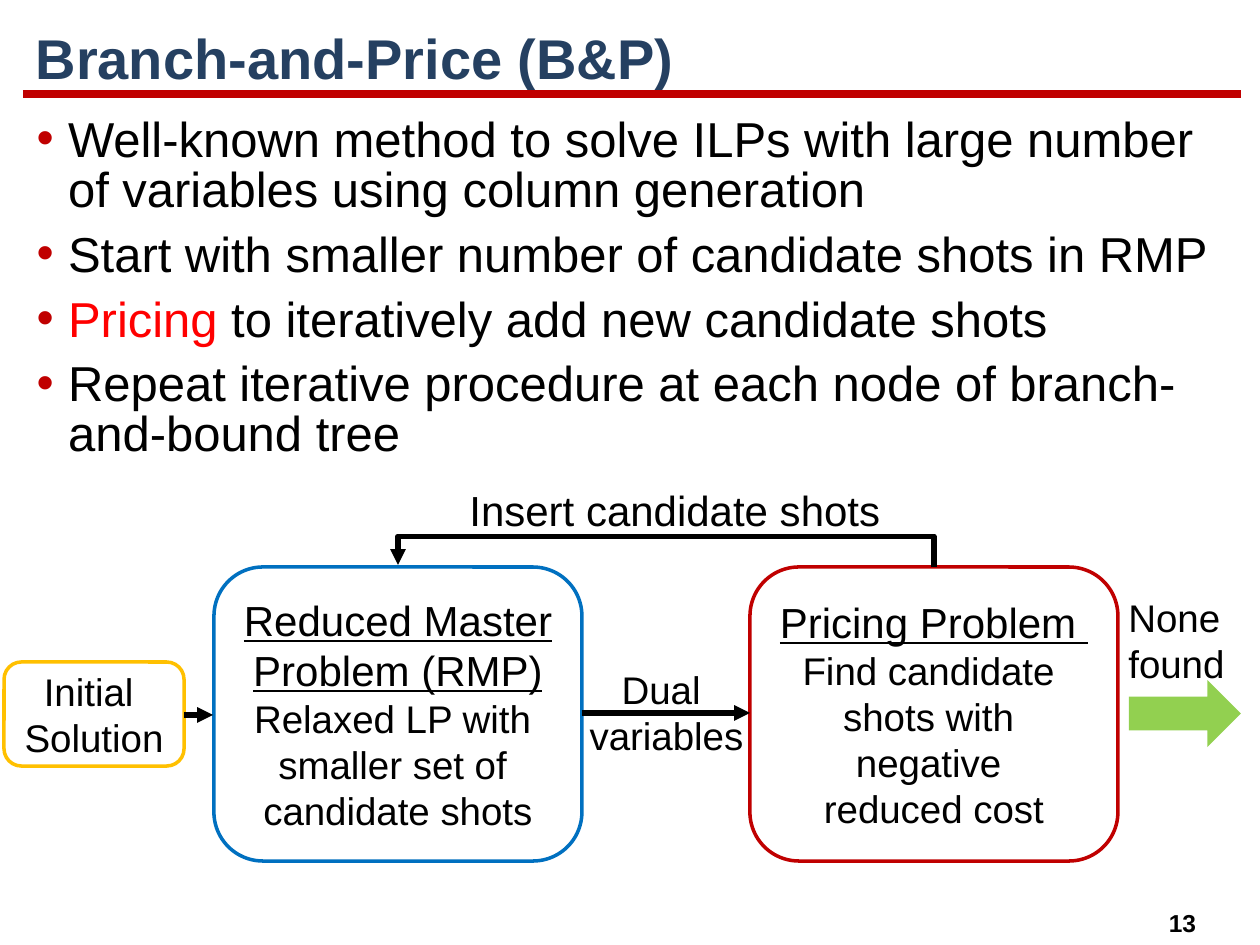
from lxml import etree
from pptx import Presentation
from pptx.dml.color import RGBColor
from pptx.enum.shapes import MSO_CONNECTOR, MSO_SHAPE
from pptx.enum.text import MSO_ANCHOR, MSO_AUTO_SIZE, PP_ALIGN
from pptx.oxml.ns import qn
from pptx.util import Pt

SCALE = 914400 / 126
FONT = "Arial"
BLACK = RGBColor(0x00, 0x00, 0x00)
NAVY = RGBColor(0x25, 0x40, 0x61)
CRIMSON = RGBColor(0xC0, 0x00, 0x00)
RED = RGBColor(0xFF, 0x00, 0x00)
BLUE = RGBColor(0x00, 0x70, 0xC0)
GOLD = RGBColor(0xFF, 0xC0, 0x00)
GREEN = RGBColor(0x92, 0xD0, 0x50)
STRAIGHT, ELBOW = MSO_CONNECTOR.STRAIGHT, MSO_CONNECTOR.ELBOW
ROUND, ARROW = MSO_SHAPE.ROUNDED_RECTANGLE, MSO_SHAPE.RIGHT_ARROW
TOP, MIDDLE = MSO_ANCHOR.TOP, MSO_ANCHOR.MIDDLE
LEFT, CENTER = PP_ALIGN.LEFT, PP_ALIGN.CENTER
NO_FIT = MSO_AUTO_SIZE.NONE

POINTS = [
    "Well-known method to solve ILPs with large number of variables "
    "using column generation",
    "Start with smaller number of candidate shots in RMP",
    [("Pricing", {"color": RED}), (" to iteratively add new candidate shots", {})],
    "Repeat iterative procedure at each node of branch-and-bound tree",
]
HEAD = {"size": 24, "underline": True}
MASTER = [
    [("Reduced Master Problem (RMP)", HEAD)],
    "Relaxed LP with ", "smaller set of ", "candidate shots",
]
PRICING = [
    [("Pricing Problem ", HEAD)],
    "Find candidate ", "shots with ", "negative \nreduced cost",
]


def px(*vals):
    return [round(v * SCALE) for v in vals]


def style(font, size=22, color=BLACK, bold=False, underline=False):
    font.name, font.size = FONT, Pt(size)
    font.bold, font.underline = bold, underline
    font.color.rgb = color


def write(frame, lines, align=LEFT, anchor=TOP, wrap=True, space=None, **fmt):
    """Fill a frame; a line is a string or a list of (text, format) runs."""
    frame.auto_size, frame.word_wrap = NO_FIT, wrap
    frame.vertical_anchor = anchor
    for i, line in enumerate(lines):
        para = frame.add_paragraph() if i else frame.paragraphs[0]
        para.alignment = align
        para.line_spacing = space
        for text, extra in [(line, {})] if isinstance(line, str) else line:
            for j, part in enumerate(text.split("\n")):
                if j:
                    para.add_line_break()
                run = para.add_run()
                run.text = part
                style(run.font, **{**fmt, **extra})


def place(shape, *box):
    shape.left, shape.top, shape.width, shape.height = px(*box)


def label(slide, box, lines, **fmt):
    write(slide.shapes.add_textbox(*px(*box)).text_frame, lines, **fmt)


def bullet(para):
    """Give a paragraph a crimson dot, a hanging indent and space before."""
    para.space_before = Pt(8.5)
    props = para._p.get_or_add_pPr()
    props.set("marL", "228600")
    props.set("indent", "-228600")
    color = etree.SubElement(props, qn("a:buClr"))
    etree.SubElement(color, qn("a:srgbClr"), val=str(CRIMSON))
    etree.SubElement(props, qn("a:buFont"), typeface=FONT)
    etree.SubElement(props, qn("a:buChar"), char="•")


def block(slide, kind, box, fill=None, line=None):
    shape = slide.shapes.add_shape(kind, *px(*box))
    shape.shadow.inherit = False
    if fill:
        shape.fill.solid()
        shape.fill.fore_color.rgb = fill
    else:
        shape.fill.background()
    if line:
        shape.line.color.rgb = line
        shape.line.width = Pt(2)
    else:
        shape.line.fill.background()
    return shape


def link(slide, ends, color=BLACK, width=3, kind=STRAIGHT, tail=True):
    wire = slide.shapes.add_connector(kind, *px(*ends))
    wire.line.color.rgb = color
    wire.line.width = Pt(width)
    if tail:
        etree.SubElement(wire.line._get_or_add_ln(), qn("a:tailEnd"), type="triangle")
    etree.SubElement(wire._element.spPr, qn("a:effectLst"))
    return wire


def loop(slide, start, end, base, rise):
    """Draw an arrow up from start, across, and down to end."""
    mid, half, thin = (start + end) / 2, (start - end) / 2, 2
    wire = link(slide, (mid - thin / 2, base + half, mid + thin / 2, base - half),
                kind=ELBOW)
    props = wire._element.spPr
    props.find(qn("a:xfrm")).set("rot", str(270 * 60000))
    geom = props.find(qn("a:prstGeom"))
    guides = geom.find(qn("a:avLst"))
    if guides is None:
        guides = etree.SubElement(geom, qn("a:avLst"))
    etree.SubElement(guides, qn("a:gd"), name="adj1",
                     fmla=f"val {round(rise / thin * 100000)}")


def main():
    deck = Presentation()
    deck.slide_width, deck.slide_height = px(1260, 945)
    slide = deck.slides.add_slide(deck.slide_layouts[1])
    title, body = slide.placeholders

    link(slide, (23, 94, 1241, 94), color=CRIMSON, width=4.5, tail=False)
    label(slide, (1155, 902, 55, 43), ["13"], align=CENTER, wrap=False,
          size=14, bold=True)

    place(title, 23, 20, 1220, 82)
    write(title.text_frame, ["Branch-and-Price (B&P)"], anchor=MIDDLE,
          space=0.9, size=32, color=NAVY, bold=True)
    place(body, 24, 111, 1217, 740)
    write(body.text_frame, POINTS, space=0.85, size=28)
    for para in body.text_frame.paragraphs:
        bullet(para)

    label(slide, (572, 660, 189, 106), ["Dual ", "variables"], align=CENTER)
    label(slide, (457, 478, 451, 63), ["Insert candidate shots"], size=24)
    label(slide, (1116, 588, 124, 106), ["None", "found"])

    for box, color, lines in (
        ((4, 662, 180, 104), GOLD, ["Initial ", "Solution"]),
        ((214, 567, 368, 294), BLUE, MASTER),
        ((750, 567, 368, 294), CRIMSON, PRICING),
    ):
        node = block(slide, ROUND, box, line=color)
        write(node.text_frame, lines, align=CENTER, anchor=MIDDLE)

    link(slide, (184, 715, 213, 715))
    link(slide, (582, 713, 750, 713))
    loop(slide, start=934, end=398, base=566, rise=31)
    block(slide, ARROW, (1129, 680, 112, 67), fill=GREEN)
    deck.save("out.pptx")


if __name__ == "__main__":
    main()
